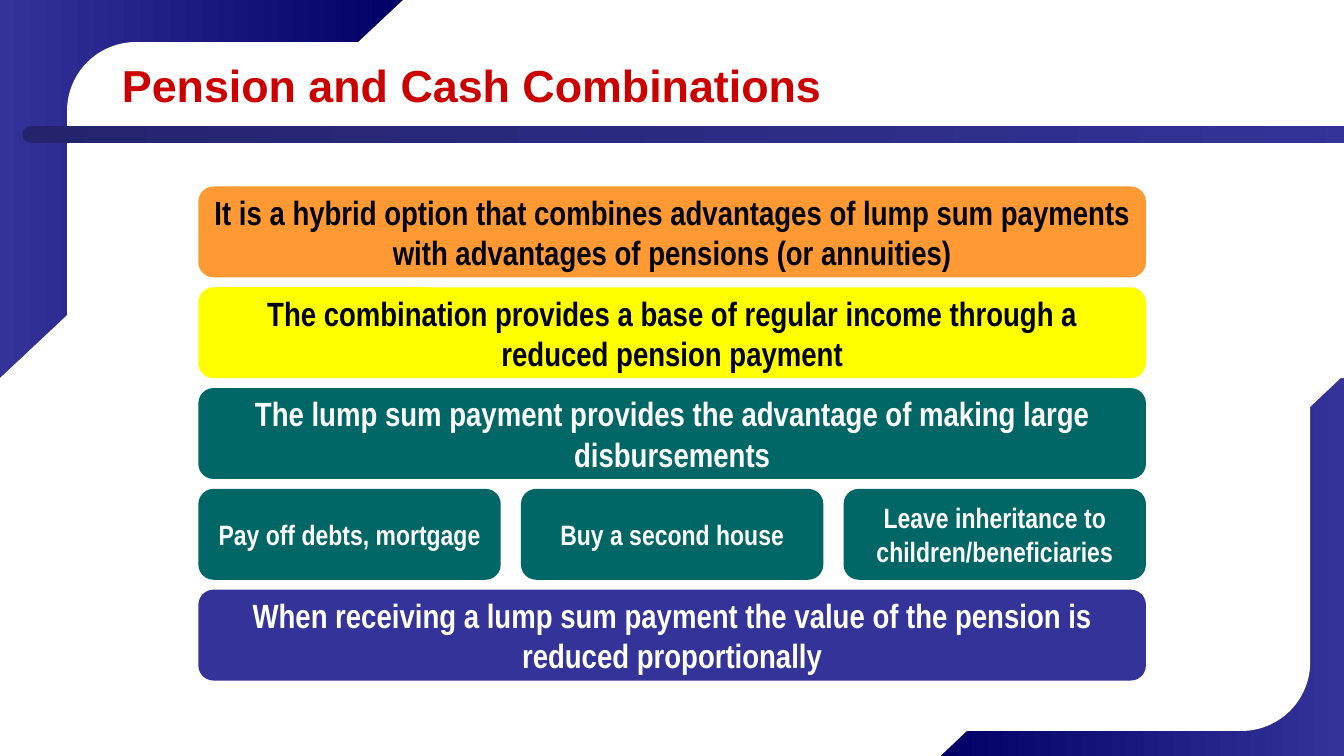
from dataclasses import dataclass

import pptx
import pptx.dml.color
import pptx.enum.shapes
import pptx.enum.text
import pptx.shapes.autoshape
import pptx.slide
import pptx.util

Cm = pptx.util.Cm
Pt = pptx.util.Pt
RGBColor = pptx.dml.color.RGBColor
Kind = pptx.enum.shapes.MSO_SHAPE
Align = pptx.enum.text.PP_ALIGN
Anchor = pptx.enum.text.MSO_ANCHOR
Shape = pptx.shapes.autoshape.Shape

WHITE = RGBColor(0xFF, 0xFF, 0xFF)
BLACK = RGBColor(0x00, 0x00, 0x00)
RED = RGBColor(0xCC, 0x00, 0x00)
ORANGE = RGBColor(0xFF, 0x99, 0x33)
YELLOW = RGBColor(0xFF, 0xFF, 0x00)
TEAL = RGBColor(0x00, 0x66, 0x66)
BLUE = RGBColor(0x33, 0x33, 0x99)
NAVY = RGBColor(0x00, 0x00, 0x66)
DUSK = RGBColor(0x24, 0x24, 0x6D)

LEFT, TOP, WIDE, HIGH = 5.0, 4.7, 23.88, 2.29
ROW = 2.54
SMALL = 7.62
STEP = (WIDE - SMALL) / 2


@dataclass
class Part:
    kind: Kind
    left: float
    top: float
    width: float
    height: float
    fills: tuple[RGBColor, ...] = (WHITE,)
    flip: str = ""
    round: float | None = None


@dataclass
class Tile:
    row: int
    text: str
    fill: RGBColor
    ink: RGBColor = WHITE
    size: int = 24
    left: float = LEFT
    width: float = WIDE


PARTS = [
    Part(Kind.RECTANGLE, 23.72, 9.53, 10.15, 9.52, (NAVY, BLUE)),
    Part(Kind.RIGHT_TRIANGLE, 23.7, 9.45, 10.17, 9.6, flip="flipV"),
    Part(Kind.RECTANGLE, 0, 0, 10.16, 9.53, (BLUE, NAVY)),
    Part(Kind.RIGHT_TRIANGLE, 0, 0, 10.16, 9.53, flip="flipH"),
    Part(Kind.RECTANGLE, 0, 9.53, 10.44, 9.52),
    Part(Kind.RECTANGLE, 23.42, 0, 10.44, 9.53),
    Part(Kind.ROUNDED_RECTANGLE, 1.69, 1.06, 31.33, 17.36, round=0.1),
    Part(Kind.ROUNDED_RECTANGLE, 0.56, 3.18, 34.43, 0.42, (DUSK, BLUE), round=0.5),
]

USES = ["Pay off debts, mortgage", "Buy a second house",
        "Leave inheritance to children/beneficiaries"]

TILES = [
    Tile(0, "It is a hybrid option that combines advantages of lump sum payments "
         "with advantages of pensions (or annuities)", ORANGE, BLACK),
    Tile(1, "The combination provides a base of regular income through a "
         "reduced pension payment", YELLOW, BLACK),
    Tile(2, "The lump sum payment provides the advantage of making large "
         "disbursements", TEAL),
    *(Tile(3, use, TEAL, size=20, left=LEFT + i * STEP, width=SMALL)
      for i, use in enumerate(USES)),
    Tile(4, "When receiving a lump sum payment the value of the pension is "
         "reduced proportionally", BLUE),
]


def draw(slide: pptx.slide.Slide, part: Part) -> Shape:
    shape = slide.shapes.add_shape(
        part.kind, Cm(part.left), Cm(part.top), Cm(part.width), Cm(part.height))
    shape.shadow.inherit = False
    shape.line.fill.background()
    if len(part.fills) == 1:
        shape.fill.solid()
        shape.fill.fore_color.rgb = part.fills[0]
    else:
        shape.fill.gradient()
        shape.fill.gradient_angle = 0
        for stop, color in zip(shape.fill.gradient_stops, part.fills):
            stop.color.rgb = color
    if part.flip:
        shape._element.spPr.xfrm.set(part.flip, "1")
    if part.round is not None:
        shape.adjustments[0] = part.round
    return shape


def write(shape: Shape, text: str, ink: RGBColor, font: dict, para: dict) -> None:
    frame = shape.text_frame
    frame.text = text
    line = frame.paragraphs[0]
    looks = {"word_wrap": True, "vertical_anchor": Anchor.MIDDLE,
             "auto_size": pptx.enum.text.MSO_AUTO_SIZE.NONE}
    run = line.runs[0].font
    for target, values in ((frame, looks), (line, para), (run, font)):
        for name, value in values.items():
            setattr(target, name, value)
    run.color.rgb = ink


def head(slide: pptx.slide.Slide) -> None:
    title = slide.shapes.title
    box = {"left": Cm(2.82), "top": Cm(1.27), "width": Cm(29.36), "height": Cm(1.7)}
    for name, value in box.items():
        setattr(title, name, value)
    write(title, "Pension and Cash Combinations", RED,
          {"name": "Arial", "size": Pt(32), "bold": True},
          {"alignment": Align.LEFT})
    slide.shapes._spTree.append(title._element)


def lay(slide: pptx.slide.Slide, tile: Tile) -> None:
    shape = draw(slide, Part(Kind.ROUNDED_RECTANGLE, tile.left, TOP + tile.row * ROW,
                             tile.width, HIGH, (tile.fill,)))
    write(shape, tile.text, tile.ink,
          {"name": "Arial Narrow", "size": Pt(tile.size), "bold": True},
          {"alignment": Align.CENTER, "space_before": Pt(tile.size * 0.2)})


def main() -> None:
    deck = pptx.Presentation()
    deck.slide_width = Cm(33.87)
    deck.slide_height = Cm(19.05)
    slide = deck.slides.add_slide(deck.slide_layouts[5])
    for part in PARTS:
        draw(slide, part)
    head(slide)
    for tile in TILES:
        lay(slide, tile)
    deck.save("out.pptx")


if __name__ == "__main__":
    main()
